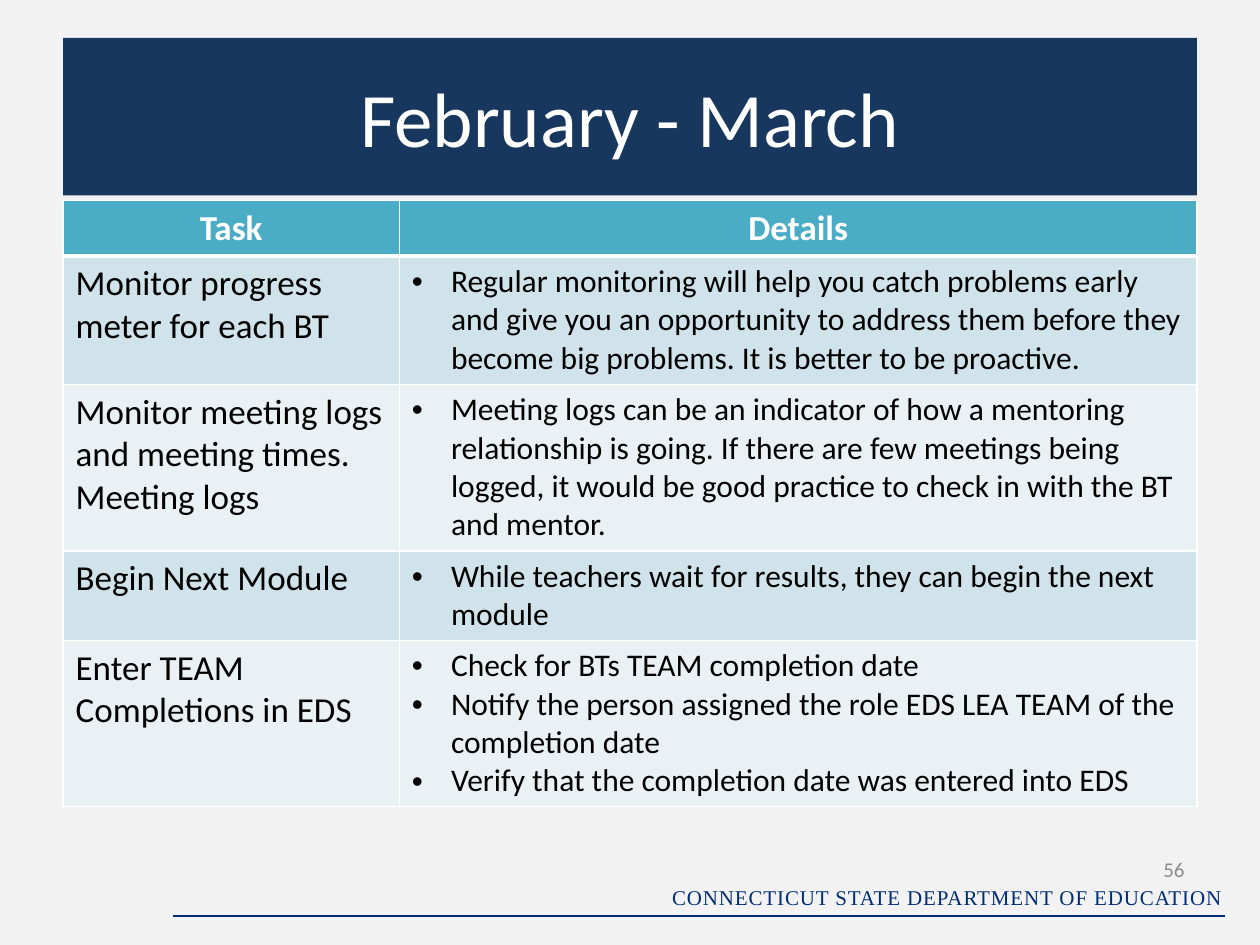
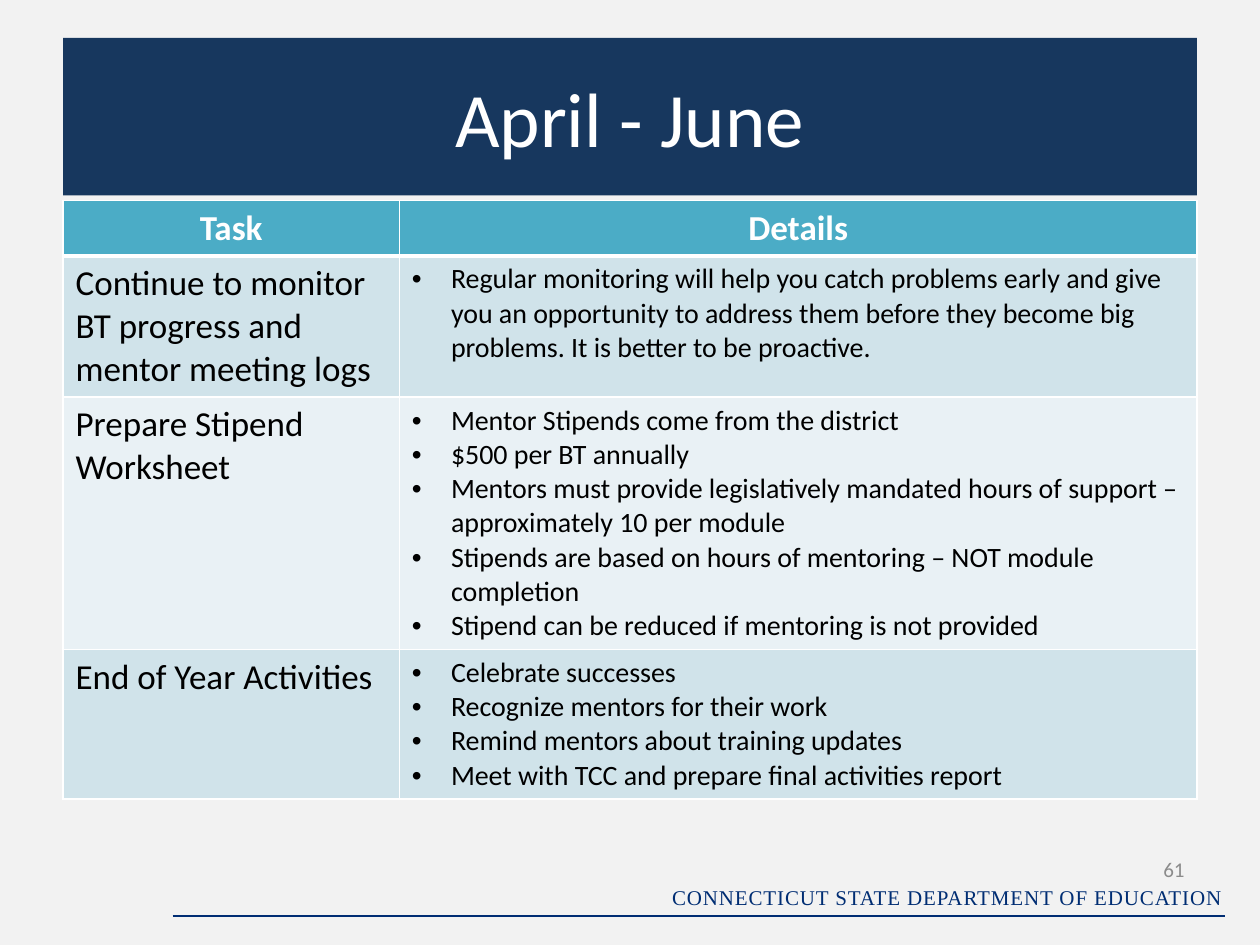
import pptx
import pptx.dml.color
import pptx.enum.shapes
import pptx.enum.text
import pptx.oxml
import pptx.oxml.ns
import pptx.util
from lxml import etree

Inches = pptx.util.Inches
Pt = pptx.util.Pt
RGBColor = pptx.dml.color.RGBColor
Align = pptx.enum.text.PP_ALIGN
Anchor = pptx.enum.text.MSO_ANCHOR
qn = pptx.oxml.ns.qn

BACKGROUND = RGBColor(0xF2, 0xF2, 0xF2)
NAVY = RGBColor(0x17, 0x37, 0x5E)
FOOTER_BLUE = RGBColor(0x00, 0x2D, 0x73)
TEAL = RGBColor(0x4B, 0xAC, 0xC6)
BANDS = (RGBColor(0xD0, 0xE3, 0xEA), RGBColor(0xE9, 0xF1, 0xF5))
NUMBER_GRAY = RGBColor(0x8C, 0x8C, 0x8C)
WHITE = RGBColor(0xFF, 0xFF, 0xFF)
BLACK = RGBColor(0x00, 0x00, 0x00)

BODY_FONT = "Calibri"
FOOTER_FONT = "Times New Roman"

TITLE_BOX = (0.5, 0.3, 9, 1.25)
TABLE_BOX = (0.5, 1.59, 9)
FOOTER_BOX = (1.37, 6.7, 8.35, 0.57)
TASK_WIDTH = 2.67
HEADER_HEIGHT = 0.44
BULLET_INDENT = 0.31

MONITORING = (
    "Regular monitoring will help you catch problems early and give you an opportunity "
    "to address them before they become big problems. It is better to be proactive."
)

MONTH_SLIDES = [
    {
        "title": "February - March",
        "number": "56",
        "detail_size": 18,
        "tasks": [
            (1.02, "Monitor progress meter for each BT", [MONITORING]),
            (1.32, "Monitor meeting logs and meeting times. Meeting logs", [
                "Meeting logs can be an indicator of how a mentoring relationship is going. "
                "If there are few meetings being logged, it would be good practice to check "
                "in with the BT and mentor.",
            ]),
            (0.71, "Begin Next Module", [
                "While teachers wait for results, they can begin the next module",
            ]),
            (1.32, "Enter TEAM Completions in EDS", [
                "Check for BTs TEAM completion date",
                "Notify the person assigned the role EDS LEA TEAM of the completion date",
                "Verify that the completion date was entered into EDS",
            ]),
        ],
    },
    {
        "title": "April - June",
        "number": "61",
        "detail_size": 16,
        "tasks": [
            (1.12, "Continue to monitor BT progress and mentor meeting logs", [MONITORING]),
            (2.0, "Prepare Stipend Worksheet", [
                "Mentor Stipends come from the district",
                "$500 per BT annually",
                "Mentors must provide legislatively mandated hours of support – "
                "approximately 10 per module",
                "Stipends are based on hours of mentoring – NOT module completion",
                "Stipend can be reduced if mentoring is not provided",
            ]),
            (1.18, "End of Year Activities", [
                "Celebrate successes",
                "Recognize mentors for their work",
                "Remind mentors about training updates",
                "Meet with TCC and prepare final activities report",
            ]),
        ],
    },
]


def write(paragraph, text, size, color, align=Align.LEFT, font=BODY_FONT, bold=False):
    paragraph.alignment = align
    run = paragraph.add_run()
    run.text = text
    run.font.name = font
    run.font.size = Pt(size)
    run.font.bold = bold
    run.font.color.rgb = color
    return run


def add_bullet(paragraph):
    properties = paragraph._p.get_or_add_pPr()
    properties.set("marL", str(Inches(BULLET_INDENT)))
    properties.set("indent", str(-Inches(BULLET_INDENT)))
    etree.SubElement(properties, qn("a:buFont")).set("typeface", "Arial")
    etree.SubElement(properties, qn("a:buChar")).set("char", "•")


def style_cell(cell, fill_color, top=1, bottom=1):
    properties = cell._tc.get_or_add_tcPr()
    for side, width in (("L", 1), ("R", 1), ("T", top), ("B", bottom)):
        border = etree.SubElement(properties, qn(f"a:ln{side}"), w=str(Pt(width)))
        fill = etree.SubElement(border, qn("a:solidFill"))
        etree.SubElement(fill, qn("a:srgbClr"), val=str(WHITE))
    cell.fill.solid()
    cell.fill.fore_color.rgb = fill_color


def add_title(slide, box, text):
    title = slide.shapes.title
    title.left, title.top, title.width, title.height = map(Inches, box)
    title.fill.solid()
    title.fill.fore_color.rgb = NAVY
    frame = title.text_frame
    frame.auto_size = pptx.enum.text.MSO_AUTO_SIZE.NONE
    frame.vertical_anchor = Anchor.MIDDLE
    write(frame.paragraphs[0], text, 44, WHITE, Align.CENTER)


def add_task_table(slide, box, tasks, detail_size):
    left, top, width = box
    heights = [HEADER_HEIGHT] + [height for height, _, _ in tasks]
    frame = slide.shapes.add_table(
        len(heights), 2, Inches(left), Inches(top), Inches(width), Inches(sum(heights))
    )
    table = frame.table
    table.columns[0].width = Inches(TASK_WIDTH)
    table.columns[1].width = Inches(width - TASK_WIDTH)
    for row, height in zip(table.rows, heights):
        row.height = Inches(height)

    for column, heading in enumerate(("Task", "Details")):
        cell = table.cell(0, column)
        style_cell(cell, TEAL, bottom=3)
        write(cell.text_frame.paragraphs[0], heading, 20, WHITE, Align.CENTER, bold=True)

    for index, (_, task, details) in enumerate(tasks):
        task_cell, detail_cell = table.rows[index + 1].cells
        for cell in (task_cell, detail_cell):
            style_cell(cell, BANDS[index % 2], top=3 if index == 0 else 1)
        write(task_cell.text_frame.paragraphs[0], task, 20, BLACK)
        detail_frame = detail_cell.text_frame
        for position, detail in enumerate(details):
            paragraph = detail_frame.add_paragraph() if position else detail_frame.paragraphs[0]
            add_bullet(paragraph)
            write(paragraph, detail, detail_size, BLACK)


def add_text_box(slide, left, top, width, height, anchor):
    shape = slide.shapes.add_textbox(Inches(left), Inches(top), Inches(width), Inches(height))
    shape.text_frame.word_wrap = True
    shape.text_frame.vertical_anchor = anchor
    return shape.text_frame.paragraphs[0]


def add_footer(slide, box, number):
    left, top, width, height = box
    right, bottom = left + width, top + height
    rule = slide.shapes.add_connector(
        pptx.enum.shapes.MSO_CONNECTOR.STRAIGHT,
        Inches(left), Inches(bottom), Inches(right), Inches(bottom),
    )
    rule.line.color.rgb = FOOTER_BLUE
    rule.line.width = Pt(0.75)
    etree.SubElement(rule._element.spPr, qn("a:effectLst"))

    department = add_text_box(slide, right - 4.54, bottom - 0.3, 4.62, 0.3, Anchor.TOP)
    run = write(department, "CONNECTICUT STATE DEPARTMENT OF EDUCATION", 12,
                FOOTER_BLUE, Align.RIGHT, FOOTER_FONT)
    run.font._element.set("spc", "50")

    page = add_text_box(slide, right - 0.75, top, 0.53, 0.4, Anchor.MIDDLE)
    write(page, number, 12, NUMBER_GRAY, Align.RIGHT)


def add_month_slide(presentation, content):
    slide = presentation.slides.add_slide(presentation.slide_layouts[5])
    slide.background.fill.solid()
    slide.background.fill.fore_color.rgb = BACKGROUND
    add_title(slide, TITLE_BOX, content["title"])
    add_task_table(slide, TABLE_BOX, content["tasks"], content["detail_size"])
    add_footer(slide, FOOTER_BOX, content["number"])


def main():
    presentation = pptx.Presentation()
    presentation.slide_width = Inches(10)
    presentation.slide_height = Inches(7.5)
    for content in MONTH_SLIDES:
        add_month_slide(presentation, content)
    presentation.save("out.pptx")


if __name__ == "__main__":
    main()
